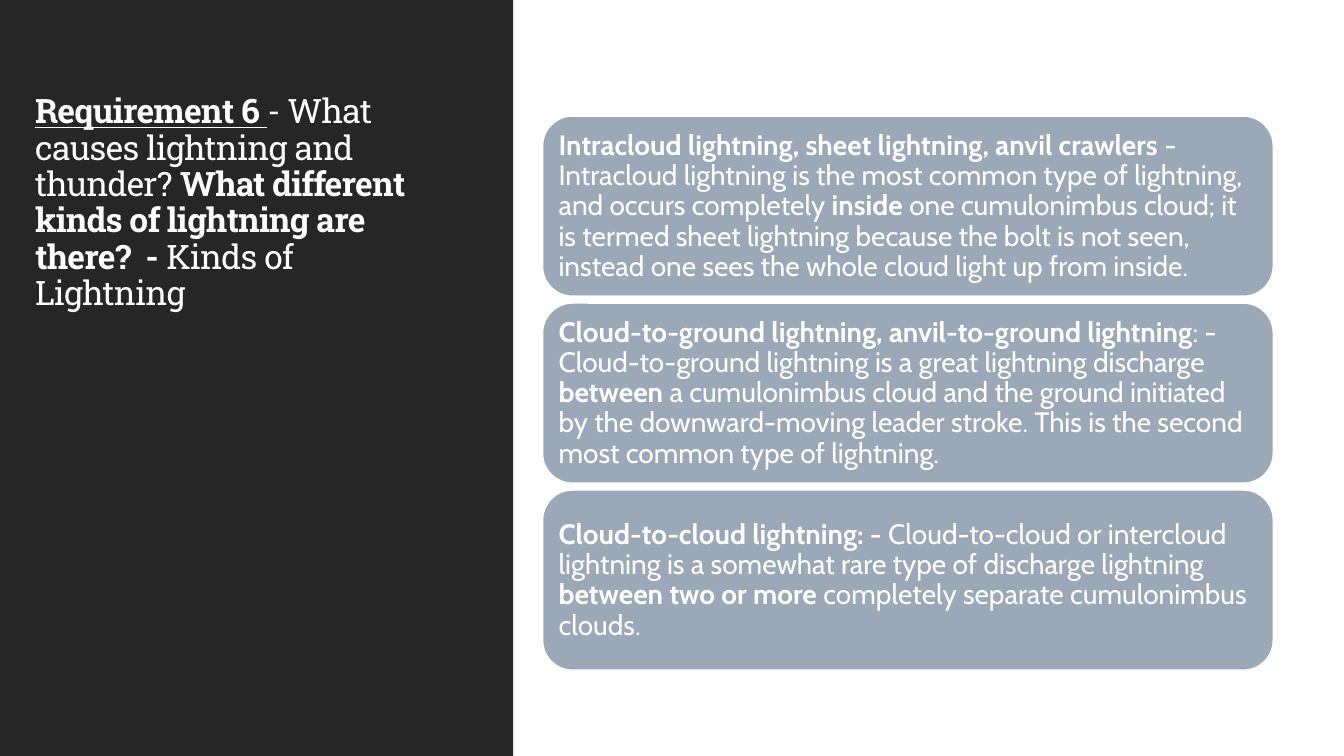
"""Build a slide on the kinds of lightning."""
from pptx import Presentation
from pptx.dml.color import RGBColor
from pptx.enum.shapes import MSO_SHAPE
from pptx.enum.text import MSO_ANCHOR, PP_ALIGN
from pptx.util import Inches, Pt


def color(value):
    return RGBColor.from_string(value)


def add_text(left, top, width, height, runs, font, size, anchor,
             inset=(0.08, 0.08), spacing=0):
    box = slide.shapes.add_textbox(Inches(left), Inches(top),
                                   Inches(width), Inches(height))
    frame = box.text_frame
    frame.word_wrap = True
    frame.vertical_anchor = anchor
    frame.margin_left = frame.margin_right = Inches(inset[0])
    frame.margin_top = frame.margin_bottom = Inches(inset[1])
    para = frame.paragraphs[0]
    para.alignment = PP_ALIGN.LEFT
    para.line_spacing = 0.9
    for words, bold in runs:
        run = para.add_run()
        run.text = words
        run.font.name = font
        run.font.size = Pt(size)
        run.font.bold = bold
        run.font.color.rgb = color("FFFFFF")
        if spacing:
            run.font._element.set("spc", str(spacing))
    return para


deck = Presentation()
deck.slide_width = Inches(13.33)
deck.slide_height = Inches(7.5)
slide = deck.slides.add_slide(deck.slide_layouts[6])

panel = slide.shapes.add_shape(MSO_SHAPE.RECTANGLE, 0, 0,
                               Inches(5.09), Inches(7.5))
panel.shadow.inherit = False
panel.fill.solid()
panel.fill.fore_color.rgb = color("262626")
panel.line.fill.background()

title = add_text(0.25, 0.86, 4.3, 2.29, [
    ("Requirement 6 ", True),
    ("- What causes lightning and thunder? ", False),
    ("What different kinds of lightning are there?  - ", True),
    ("Kinds of Lightning", False),
], "Roboto Slab", 24, MSO_ANCHOR.BOTTOM, inset=(0.1, 0.05), spacing=-50)
title.runs[0].font.underline = True

kinds = [
    [("Intracloud lightning, sheet lightning, anvil crawlers ", True),
     ("- Intracloud lightning is the most common type of lightning, "
      "and occurs completely ", False),
     ("inside", True),
     (" one cumulonimbus cloud; it is termed sheet lightning because the "
      "bolt is not seen, instead one sees the whole cloud light up from "
      "inside.", False)],
    [("Cloud-to-ground lightning, anvil-to-ground lightning", True),
     (": - Cloud-to-ground lightning is a great lightning discharge", False),
     (" between ", True),
     ("a cumulonimbus cloud and the ground initiated by the downward-moving "
      "leader stroke. This is the second most common type of lightning.",
      False)],
    [("Cloud-to-cloud lightning: - ", True),
     ("Cloud-to-cloud or intercloud lightning is a somewhat rare type of "
      "discharge lightning ", False),
     ("between two or more ", True),
     ("completely separate cumulonimbus clouds.", False)],
]
for index, runs in enumerate(kinds):
    top = 1.15 + index * 3.71 / 2
    card = slide.shapes.add_shape(MSO_SHAPE.ROUNDED_RECTANGLE, Inches(5.38),
                                  Inches(top), Inches(7.25), Inches(1.79))
    card.shadow.inherit = False
    card.fill.solid()
    card.fill.fore_color.rgb = color("9BA8B7")
    card.line.color.rgb = color("FFFFFF")
    card.line.width = Pt(1.25)
    add_text(5.46, top + 0.09, 7.08, 1.62, runs, "Cabin", 20,
             MSO_ANCHOR.MIDDLE)

deck.save("out.pptx")
